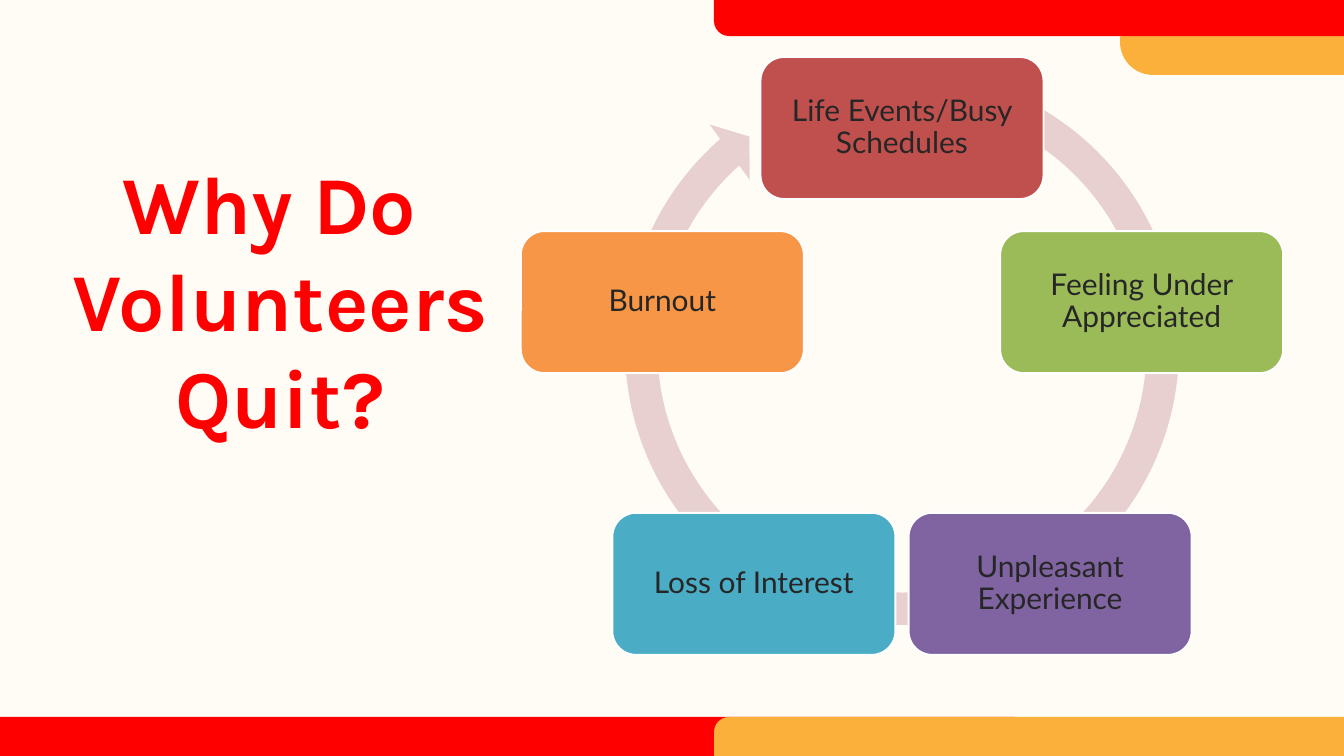
from math import cos, radians, sin

from pptx import Presentation
from pptx.dml.color import RGBColor
from pptx.enum.shapes import MSO_SHAPE
from pptx.enum.text import MSO_ANCHOR, MSO_AUTO_SIZE, PP_ALIGN
from pptx.util import Emu, Pt

PX = 914400 / 67.2  # EMU in one px

CREAM = RGBColor(0xFF, 0xFB, 0xF5)
RED = RGBColor(0xFF, 0x00, 0x00)
AMBER = RGBColor(0xFB, 0xB0, 0x3B)
PINK = RGBColor(0xE8, 0xD0, 0xD0)
WHITE = RGBColor(0xFF, 0xFF, 0xFF)
INK = RGBColor(0x26, 0x26, 0x26)
BRICK = RGBColor(0xC0, 0x50, 0x4D)
GREEN = RGBColor(0x9B, 0xBB, 0x59)
PURPLE = RGBColor(0x80, 0x64, 0xA2)
TEAL = RGBColor(0x4B, 0xAC, 0xC6)
ORANGE = RGBColor(0xF7, 0x96, 0x46)

# Reasons, clockwise from the top
REASONS = [
    ("Life Events/Busy Schedules", BRICK),
    ("Feeling Under Appreciated", GREEN),
    ("Unpleasant Experience", PURPLE),
    ("Loss of Interest", TEAL),
    ("Burnout", ORANGE),
]
CENTER_X, CENTER_Y, RADIUS = 902, 380, 252
NODE_W, NODE_H = 283, 142


def px(n):
    return Emu(round(n * PX))


def add_block(s, kind, x, y, w, h, color):
    sp = s.shapes.add_shape(kind, px(x), px(y), px(w), px(h))
    sp.shadow.inherit = False
    sp.fill.solid()
    sp.fill.fore_color.rgb = color
    sp.line.fill.background()
    return sp


def add_band(s, x, y, w, h, color, radius):
    sp = add_block(s, MSO_SHAPE.ROUNDED_RECTANGLE, x, y, w, h, color)
    sp.adjustments[0] = radius / h


def set_insets(tf, inset):
    tf.margin_left = tf.margin_right = px(inset)
    tf.margin_top = tf.margin_bottom = px(inset)


def format_paragraph(p, font, size, color, spacing, bold=False):
    p.alignment = PP_ALIGN.CENTER
    p.line_spacing = spacing
    for r in p.runs:
        r.font.name = font
        r.font.size = Pt(size)
        r.font.bold = bold
        r.font.color.rgb = color


def add_title(s):
    sp = s.shapes.title
    sp.left, sp.top, sp.width, sp.height = px(56), px(154), px(448), px(296)
    tf = sp.text_frame
    tf.text = "Why Do \nVolunteers Quit?"
    tf.word_wrap = True
    tf.auto_size = MSO_AUTO_SIZE.NONE
    tf.vertical_anchor = MSO_ANCHOR.TOP
    set_insets(tf, 0)
    for p in tf.paragraphs:
        format_paragraph(p, "Karla", 88, RED, Pt(104), bold=True)


def add_node(s, text, color, angle):
    x = CENTER_X + RADIUS * cos(angle) - NODE_W / 2
    y = CENTER_Y + RADIUS * sin(angle) - NODE_H / 2
    sp = add_block(s, MSO_SHAPE.ROUNDED_RECTANGLE, x, y, NODE_W, NODE_H, color)
    sp.line.color.rgb = WHITE
    sp.line.width = Pt(2)
    tf = sp.text_frame
    tf.text = text
    tf.word_wrap = True
    tf.vertical_anchor = MSO_ANCHOR.MIDDLE
    set_insets(tf, 14)
    format_paragraph(tf.paragraphs[0], "Lato", 32, INK, 0.9)


def add_cycle(s):
    ring = add_block(s, MSO_SHAPE.CIRCULAR_ARROW, 607, 53, 590, 590, PINK)
    for i, value in enumerate((0.055, 3.307, 137.188, 174.208, 0.058)):
        ring.adjustments[i] = value
    step = 360 / len(REASONS)
    for i, (text, color) in enumerate(REASONS):
        add_node(s, text, color, radians(i * step - 90))


def main():
    prs = Presentation()
    prs.slide_width, prs.slide_height = px(1344), px(756)
    s = prs.slides.add_slide(prs.slide_layouts[5])
    s.background.fill.solid()
    s.background.fill.fore_color.rgb = CREAM

    # Bands that bleed off the top and bottom edges
    add_block(s, MSO_SHAPE.RECTANGLE, -68, 717, 1083, 130, RED)
    add_band(s, 714, 717, 833, 105, AMBER, 15)
    add_band(s, 1120, 8, 362, 67, AMBER, 33)
    add_band(s, 714, -38, 805, 74, RED, 15)

    add_title(s)
    add_cycle(s)
    prs.save("out.pptx")


if __name__ == "__main__":
    main()
